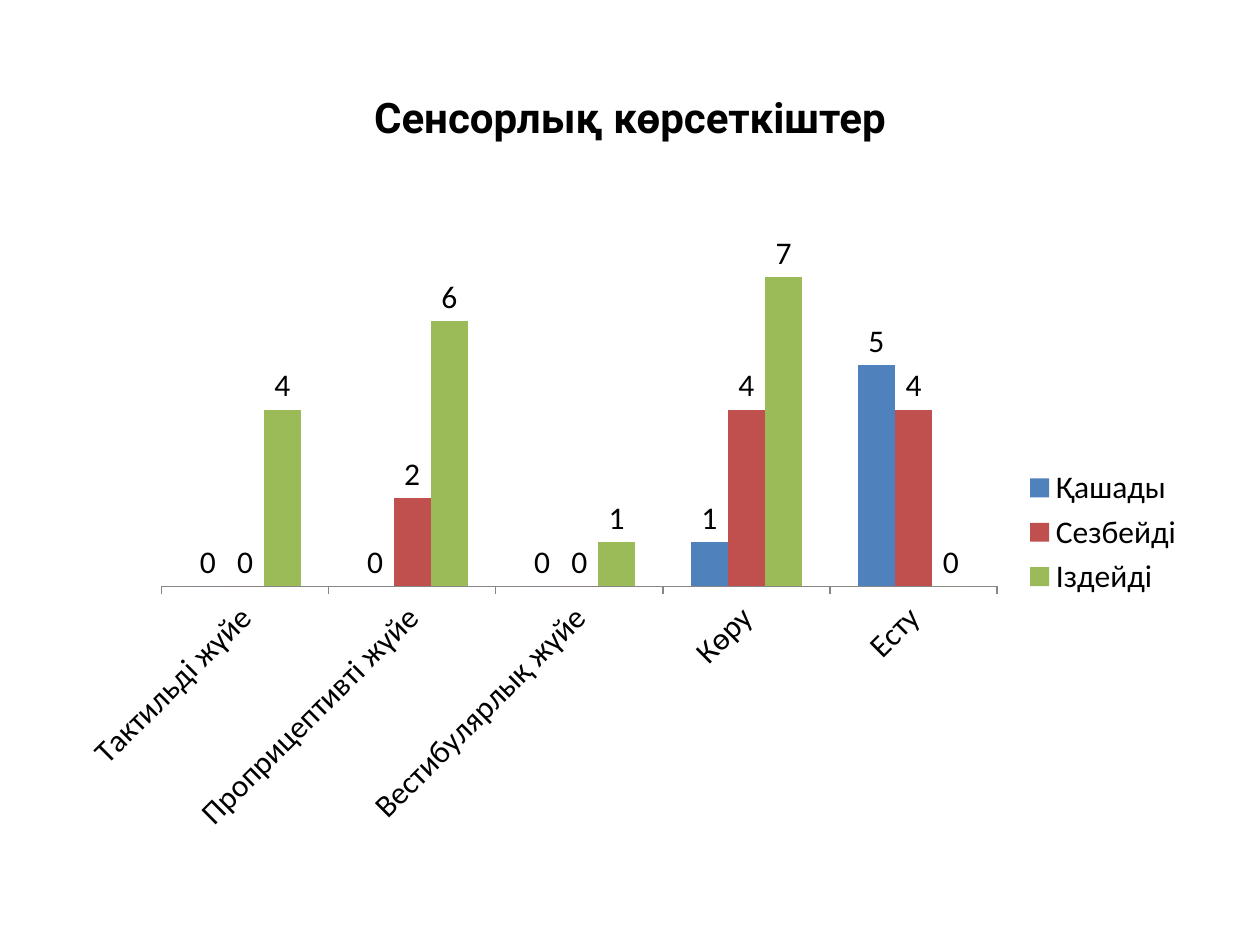
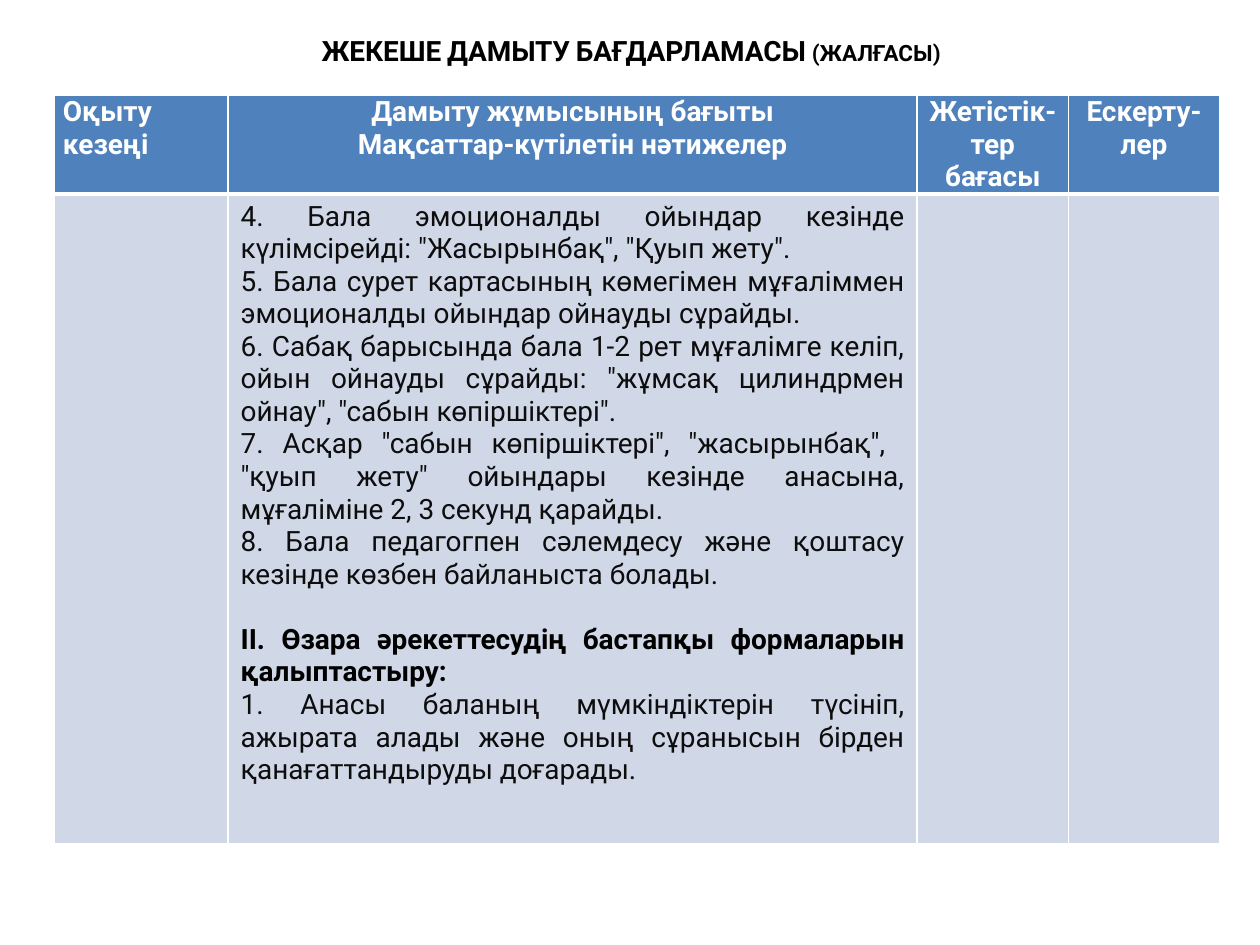
from dataclasses import dataclass

from lxml import etree
from pptx import Presentation
from pptx.chart.data import CategoryChartData
from pptx.dml.color import RGBColor
from pptx.enum.chart import (XL_CHART_TYPE, XL_LABEL_POSITION,
                             XL_LEGEND_POSITION, XL_TICK_MARK)
from pptx.enum.text import MSO_ANCHOR, PP_ALIGN
from pptx.oxml.ns import qn
from pptx.slide import Slide
from pptx.util import Inches, Pt

# Shared style
BLACK = RGBColor(0x00, 0x00, 0x00)
WHITE = RGBColor(0xFF, 0xFF, 0xFF)
BODY_TEXT = RGBColor(0x0D, 0x0D, 0x0D)
AXIS_GREY = RGBColor(0x86, 0x86, 0x86)
BLUE = RGBColor(0x4F, 0x81, 0xBD)
RED = RGBColor(0xC0, 0x50, 0x4D)
GREEN = RGBColor(0x9B, 0xBB, 0x59)
PALE_BLUE = RGBColor(0xD0, 0xD8, 0xE8)
TEXT_FONT, CHART_FONT = "Roboto", "Calibri"
TEXT_SIZE, CHART_SIZE = Pt(16), Pt(18)

LEFT, CENTER, JUSTIFY = PP_ALIGN.LEFT, PP_ALIGN.CENTER, PP_ALIGN.JUSTIFY
MIDDLE = MSO_ANCHOR.MIDDLE
CLUSTERED = XL_CHART_TYPE.COLUMN_CLUSTERED
LABEL_ABOVE = XL_LABEL_POSITION.OUTSIDE_END
LEGEND_RIGHT = XL_LEGEND_POSITION.RIGHT
TICK_OUTSIDE = XL_TICK_MARK.OUTSIDE
TITLE_ONLY = 5


@dataclass(frozen=True)
class Box:
    left: float
    top: float
    width: float
    height: float

    def lengths(self) -> tuple:
        return tuple(Inches(side) for side in
                     (self.left, self.top, self.width, self.height))


@dataclass(frozen=True)
class Response:
    name: str
    values: tuple
    color: RGBColor


@dataclass(frozen=True)
class Column:
    width: float
    heading: tuple
    alignment: PP_ALIGN = CENTER


@dataclass(frozen=True)
class Goal:
    text: str
    is_heading: bool = False


# Slide 1 content
SYSTEMS = ("Тактильді жүйе", "Проприцептивті жүйе", "Вестибулярлық жүйе", "Көру", "Есту")
RESPONSES = (
    Response("Қашады", (0, 0, 0, 1, 5), BLUE),
    Response("Сезбейді", (0, 2, 0, 4, 4), RED),
    Response("Іздейді", (4, 6, 1, 7, 0), GREEN),
)

# Slide 2 content
COLUMNS = (
    Column(1.38, ("Оқыту кезеңі",), LEFT),
    Column(5.47, ("Дамыту жұмысының бағыты", "Мақсаттар-күтілетін нәтижелер")),
    Column(1.2, ("Жетістік-тер бағасы",)),
    Column(1.2, ("Ескерту-лер",)),
)
ROW_HEIGHTS = (0.78, 5.16)
GOAL_COLUMN = 1
GOALS = (
    Goal('4. Бала эмоционалды ойындар кезінде күлімсірейді: "Жасырынбақ", "Қуып жету".'),
    Goal("5. Бала сурет картасының көмегімен мұғаліммен эмоционалды ойындар ойнауды сұрайды."),
    Goal("6. Сабақ барысында бала 1-2 рет мұғалімге келіп, ойын ойнауды сұрайды: "
         '"жұмсақ цилиндрмен ойнау", "сабын көпіршіктері".'),
    Goal('7. Асқар "сабын көпіршіктері", "жасырынбақ",  "қуып жету" ойындары кезінде '
         "анасына, мұғаліміне 2, 3 секунд қарайды."),
    Goal("8. Бала педагогпен сәлемдесу және қоштасу кезінде көзбен байланыста болады."),
    Goal("II. Өзара әрекеттесудің бастапқы формаларын қалыптастыру:", True),
    Goal("1. Анасы баланың мүмкіндіктерін түсініп, ажырата алады және оның "
         "сұранысын бірден қанағаттандыруды доғарады."),
)


def style_font(font, name: str, size: Pt, color: RGBColor, bold: bool = False) -> None:
    font.name, font.size, font.bold = name, size, bold
    font.color.rgb = color


def add_titled_slide(presentation, text: str, box: Box, size: Pt,
                     small_caps: bool = False) -> Slide:
    slide = presentation.slides.add_slide(presentation.slide_layouts[TITLE_ONLY])
    title = slide.shapes.title
    title.left, title.top, title.width, title.height = box.lengths()
    title.text_frame.text = text
    title.text_frame.vertical_anchor = MIDDLE
    paragraph = title.text_frame.paragraphs[0]
    paragraph.alignment = CENTER
    style_font(paragraph.runs[0].font, TEXT_FONT, size, BLACK, bold=True)
    if small_caps:
        paragraph.runs[0]._r.get_or_add_rPr().set("cap", "small")
    return slide


def add_response_chart(slide: Slide, box: Box) -> None:
    data = CategoryChartData()
    data.categories = SYSTEMS
    for response in RESPONSES:
        data.add_series(response.name, response.values)
    chart = slide.shapes.add_chart(CLUSTERED, *box.lengths(), data).chart
    style_font(chart.font, CHART_FONT, CHART_SIZE, BLACK)
    chart.has_title = False
    chart.has_legend = True
    chart.legend.position = LEGEND_RIGHT
    chart.legend.include_in_layout = False

    # Axes
    chart.value_axis.visible = False
    chart.value_axis.has_major_gridlines = False
    chart.value_axis.minimum_scale, chart.value_axis.maximum_scale = 0, 8
    axis = chart.category_axis
    axis.major_tick_mark = TICK_OUTSIDE
    axis.format.line.color.rgb = AXIS_GREY
    axis.format.line.width = Pt(0.75)
    style_font(axis.tick_labels.font, CHART_FONT, CHART_SIZE, BLACK)
    axis._element.txPr.bodyPr.set("rot", str(-45 * 60000))

    # Columns and their values
    plot = chart.plots[0]
    plot.gap_width, plot.overlap = 150, 0
    plot.vary_by_categories = False
    plot.has_data_labels = True
    plot.data_labels.show_value = True
    plot.data_labels.position = LABEL_ABOVE
    for series, response in zip(plot.series, RESPONSES):
        series.format.fill.solid()
        series.format.fill.fore_color.rgb = response.color


def fill_cell(cell, color: RGBColor) -> None:
    cell.fill.solid()
    cell.fill.fore_color.rgb = color


def add_border(cell, side: str, width: Pt) -> None:
    line = etree.Element(qn(f"a:{side}"), w=str(width))
    fill = etree.SubElement(line, qn("a:solidFill"))
    etree.SubElement(fill, qn("a:srgbClr"), val=str(WHITE))
    cell._tc.get_or_add_tcPr().insert(0, line)


def add_programme_table(slide: Slide, box: Box) -> None:
    table = slide.shapes.add_table(len(ROW_HEIGHTS), len(COLUMNS), *box.lengths()).table
    for row, height in zip(table.rows, ROW_HEIGHTS):
        row.height = Inches(height)

    # Heading row and empty body row, parted by a thick line
    for index, column in enumerate(COLUMNS):
        table.columns[index].width = Inches(column.width)
        heading, body = table.cell(0, index), table.cell(1, index)
        heading.margin_left = heading.margin_right = Inches(0.07)
        heading.margin_top = heading.margin_bottom = 0
        heading.text_frame.text = "\n".join(column.heading)
        for paragraph in heading.text_frame.paragraphs:
            paragraph.alignment = column.alignment
            style_font(paragraph.runs[0].font, TEXT_FONT, TEXT_SIZE, WHITE, bold=True)
        fill_cell(heading, BLUE)
        fill_cell(body, PALE_BLUE)
        add_border(heading, "lnB", Pt(3))
        add_border(body, "lnT", Pt(3))

    # Goals
    text_frame = table.cell(1, GOAL_COLUMN).text_frame
    text_frame.text = "\n".join(goal.text for goal in GOALS)
    for paragraph, goal in zip(text_frame.paragraphs, GOALS):
        paragraph.alignment = JUSTIFY
        color = BLACK if goal.is_heading else BODY_TEXT
        style_font(paragraph.runs[0].font, TEXT_FONT, TEXT_SIZE, color, goal.is_heading)
        if goal.is_heading:
            paragraph.space_before = Pt(18.75)


def main() -> None:
    presentation = Presentation()
    presentation.slide_width, presentation.slide_height = Inches(10), Inches(7.5)

    chart_slide = add_titled_slide(presentation, "Сенсорлық көрсеткіштер",
                                   Box(0.5, 0.3, 9, 1.25), Pt(24))
    add_response_chart(chart_slide, Box(0.5, 1.75, 9, 4.95))

    table_slide = add_titled_slide(presentation, "ЖЕКЕШЕ ДАМЫТУ БАҒДАРЛАМАСЫ (жалғасы)",
                                   Box(0.51, 0.13, 9, 0.54), TEXT_SIZE, small_caps=True)
    add_programme_table(table_slide, Box(0.43, 0.76, 9.25, sum(ROW_HEIGHTS)))

    presentation.save("out.pptx")


if __name__ == "__main__":
    main()
